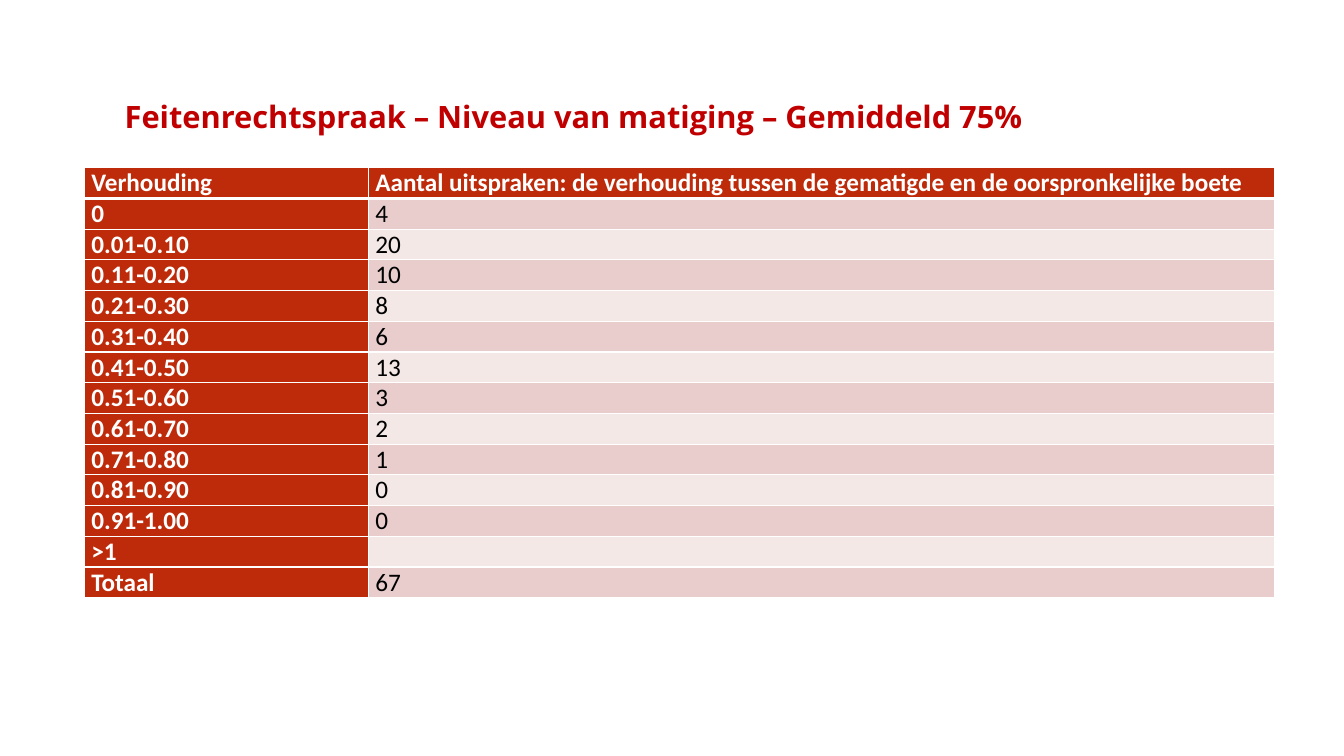
import pptx
import pptx.dml.color
import pptx.enum.text
import pptx.oxml.ns
import pptx.util
from lxml import etree

Pt = pptx.util.Pt

COLOURS = {
    "title": "C00000",
    "header": "BD2B0B",
    "odd": "E8CDCC",
    "even": "F4E8E7",
    "light": "FFFFFF",
    "dark": "000000",
}
TITLE_FONT = {"name": "Open Sans", "size": Pt(22), "bold": True}
LABEL_FONT = {"name": "Calibri", "size": Pt(18), "bold": True}
VALUE_FONT = {**LABEL_FONT, "bold": False}
TITLE_FRAME = {
    "word_wrap": True,
    "vertical_anchor": pptx.enum.text.MSO_ANCHOR.BOTTOM,
}
CELL_FORMAT = {
    "margin_left": Pt(5.2),
    "margin_right": Pt(5.2),
    "margin_top": 0,
    "margin_bottom": 0,
    "vertical_anchor": pptx.enum.text.MSO_ANCHOR.MIDDLE,
}
COLUMN_WIDTHS = (203, 647.5)
ROW_HEIGHT = 21.96
ROWS = [
    ("Verhouding", "Aantal uitspraken: de verhouding tussen de gematigde en de oorspronkelijke boete"),
    ("0", "4"),
    ("0.01-0.10", "20"),
    ("0.11-0.20", "10"),
    ("0.21-0.30", "8"),
    ("0.31-0.40", "6"),
    ("0.41-0.50", "13"),
    ("0.51-0.60", "3"),
    ("0.61-0.70", "2"),
    ("0.71-0.80", "1"),
    ("0.81-0.90", "0"),
    ("0.91-1.00", "0"),
    (">1", ""),
    ("Totaal", "67"),
]


def rgb(colour):
    return pptx.dml.color.RGBColor.from_string(COLOURS[colour])


def apply_format(target, values):
    for name, value in values.items():
        setattr(target, name, value)


def write_text(paragraph, text, font, colour):
    run = paragraph.add_run()
    run.text = text
    apply_format(run.font, font)
    run.font.color.rgb = rgb(colour)


def add_title(slide, text):
    shape = slide.shapes.add_textbox(Pt(82), Pt(19.5), Pt(850), Pt(80.5))
    apply_format(shape.text_frame, TITLE_FRAME)
    paragraph = shape.text_frame.paragraphs[0]
    paragraph.line_spacing = Pt(28)
    write_text(paragraph, text, TITLE_FONT, "title")


def add_border(properties, side, width):
    qn = pptx.oxml.ns.qn
    line = etree.SubElement(properties, qn(f"a:{side}"), w=str(Pt(width)))
    fill = etree.SubElement(line, qn("a:solidFill"))
    etree.SubElement(fill, qn("a:srgbClr"), val=COLOURS["light"])


def format_cell(cell, text, row, column):
    is_label = row == 0 or column == 0
    apply_format(cell, CELL_FORMAT)
    if text:
        write_text(
            cell.text_frame.paragraphs[0],
            text,
            LABEL_FONT if is_label else VALUE_FONT,
            "light" if is_label else "dark",
        )
    properties = cell._tc.get_or_add_tcPr()
    widths = {"lnL": 1, "lnR": 1, "lnT": 3 if row == 1 else 1, "lnB": 3 if row == 0 else 1}
    for side, width in widths.items():
        add_border(properties, side, width)
    band = "odd" if row % 2 else "even"
    cell.fill.solid()
    cell.fill.fore_color.rgb = rgb("header" if is_label else band)


def add_ratio_table(slide):
    shape = slide.shapes.add_table(
        len(ROWS), len(COLUMN_WIDTHS), Pt(60), Pt(119.8),
        Pt(sum(COLUMN_WIDTHS)), Pt(ROW_HEIGHT * len(ROWS)),
    )
    table = shape.table
    for column, width in zip(table.columns, COLUMN_WIDTHS):
        column.width = Pt(width)
    for row, texts in enumerate(ROWS):
        table.rows[row].height = Pt(ROW_HEIGHT)
        for column, text in enumerate(texts):
            format_cell(table.cell(row, column), text, row, column)


def main():
    presentation = pptx.Presentation()
    presentation.slide_width = Pt(960)
    presentation.slide_height = Pt(540)
    slide = presentation.slides.add_slide(presentation.slide_layouts[6])
    add_title(slide, "Feitenrechtspraak – Niveau van matiging – Gemiddeld 75%")
    add_ratio_table(slide)
    presentation.save("out.pptx")


if __name__ == "__main__":
    main()
